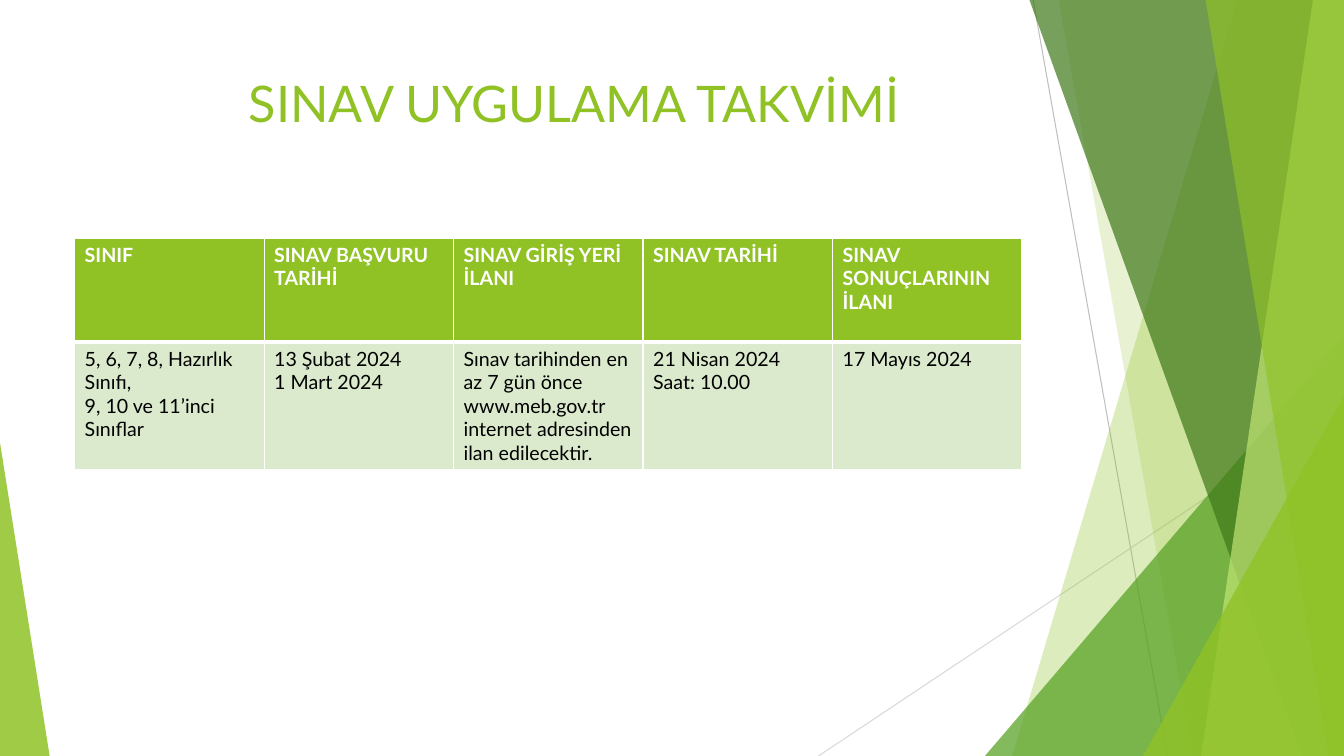
import dataclasses
import typing

import lxml.etree
import pptx
import pptx.dml.color
import pptx.enum.shapes
import pptx.enum.text
import pptx.oxml.ns
import pptx.util

Pt = pptx.util.Pt
qn = pptx.oxml.ns.qn


@dataclasses.dataclass(frozen=True)
class Theme:
    font: str = "Lato"
    title_size: float = 36
    table_size: float = 14
    lime: str = "90C226"
    pale_lime: str = "C0E474"
    green: str = "54A021"
    dark_green: str = "3F7819"
    body_fill: str = "DBE9CD"
    white: str = "FFFFFF"
    black: str = "000000"
    grey: str = "BFBFBF"
    light_grey: str = "D9D9D9"


@dataclasses.dataclass(frozen=True)
class Ray:
    start: tuple[float, float]
    end: tuple[float, float]
    color: str


@dataclasses.dataclass(frozen=True)
class Panel:
    """A band reaching the right edge, with a slanted left side."""
    top_x: float
    bottom_x: float
    color: str
    opacity: int


@dataclasses.dataclass(frozen=True)
class Wedge:
    """A right triangle standing on the bottom edge."""
    left: float
    top: float
    width: float
    apex: float
    color: str
    opacity: int


THEME = Theme()
WIDTH, HEIGHT = 960, 540
PANEL_TOP = -0.6
CONTENT_LEFT, CONTENT_WIDTH = 53.3, 676.8
ROW_HEIGHTS = (74.2, 91.2)

RAYS = (
    Ray((738, 0), (834, HEIGHT), THEME.grey),
    Ray((WIDTH, 290), (584.6, HEIGHT), THEME.light_grey),
)
DECORATIONS = (
    Panel(884, 723, THEME.lime, 30),
    Panel(756, 852, THEME.lime, 20),
    Wedge(703.5, 240, 256.5, 1, THEME.green, 72),
    Panel(735, 929.5, THEME.dark_green, 70),
    Panel(938, 858, THEME.pale_lime, 70),
    Panel(861, 949, THEME.lime, 65),
    Wedge(816.5, 283, 143.5, 1, THEME.lime, 80),
    Wedge(0, 316, 35.5, 0, THEME.lime, 85),
)
SCHEDULE = (
    ("SINIF", "SINAV BAŞVURU TARİHİ", "SINAV GİRİŞ YERİ İLANI",
     "SINAV TARİHİ", "SINAV SONUÇLARININ İLANI"),
    ("5, 6, 7, 8, Hazırlık Sınıfı,\n9, 10 ve 11’inci Sınıflar",
     "13 Şubat 2024\n1 Mart 2024",
     "Sınav tarihinden en az 7 gün önce www.meb.gov.tr internet adresinden ilan edilecektir.",
     "21 Nisan 2024 Saat: 10.00",
     "17 Mayıs 2024"),
)


def rgb(color: str) -> pptx.dml.color.RGBColor:
    return pptx.dml.color.RGBColor.from_string(color)


def write_text(frame: typing.Any, text: str, *, size: float, color: str, bold: bool = False) -> None:
    """Fill a text frame, one paragraph per line of text."""
    frame.text = text
    for para in frame.paragraphs:
        para.alignment = pptx.enum.text.PP_ALIGN.LEFT
        for span in para.runs:
            span.font.name = THEME.font
            span.font.size = Pt(size)
            span.font.bold = bold
            span.font.color.rgb = rgb(color)


def draw_ray(page: typing.Any, ray: Ray) -> None:
    line = page.shapes.add_connector(
        pptx.enum.shapes.MSO_CONNECTOR.STRAIGHT, *map(Pt, ray.start + ray.end))
    line.line.color.rgb = rgb(ray.color)
    line.line.width = Pt(0.75)
    lxml.etree.SubElement(line.element.spPr, qn("a:effectLst"))


def draw_decoration(page: typing.Any, item: Panel | Wedge) -> None:
    if isinstance(item, Panel):
        builder = page.shapes.build_freeform(item.top_x, PANEL_TOP, scale=Pt(1))
        builder.add_line_segments(
            [(WIDTH, PANEL_TOP), (WIDTH, HEIGHT), (item.bottom_x, HEIGHT)])
        shape = builder.convert_to_shape()
    else:
        shape = page.shapes.add_shape(
            pptx.enum.shapes.MSO_SHAPE.ISOSCELES_TRIANGLE,
            Pt(item.left), Pt(item.top), Pt(item.width), Pt(HEIGHT - item.top))
        shape.adjustments[0] = item.apex
    shape.shadow.inherit = False
    shape.line.fill.background()
    shape.fill.solid()
    shape.fill.fore_color.rgb = rgb(item.color)
    color_node = shape.element.spPr.find(qn("a:solidFill"))[0]
    lxml.etree.SubElement(color_node, qn("a:alpha"), val=str(item.opacity * 1000))


def set_border(cell: typing.Any, side: str, width: float) -> None:
    properties = cell._tc.get_or_add_tcPr()
    line = lxml.etree.SubElement(properties, qn(f"a:ln{side}"), w=str(Pt(width)))
    fill = lxml.etree.SubElement(line, qn("a:solidFill"))
    lxml.etree.SubElement(fill, qn("a:srgbClr"), val=THEME.white)


def draw_title(page: typing.Any, text: str) -> None:
    title = page.shapes.title
    title.left, title.top = Pt(CONTENT_LEFT), Pt(48)
    title.width, title.height = Pt(CONTENT_WIDTH), Pt(104)
    frame = title.text_frame
    frame.word_wrap = True
    frame.auto_size = pptx.enum.text.MSO_AUTO_SIZE.NONE
    frame.vertical_anchor = pptx.enum.text.MSO_ANCHOR.TOP
    frame.margin_left = Pt(124.5)
    write_text(frame, text, size=THEME.title_size, color=THEME.lime)
    # Bring the title in front of the decorations.
    title.element.getparent().append(title.element)


def draw_schedule(page: typing.Any) -> None:
    columns = len(SCHEDULE[0])
    table = page.shapes.add_table(
        len(SCHEDULE), columns, Pt(CONTENT_LEFT), Pt(170),
        Pt(CONTENT_WIDTH), Pt(sum(ROW_HEIGHTS))).table
    table.horz_banding = False
    for column in table.columns:
        column.width = Pt(CONTENT_WIDTH / columns)
    for row_index, texts in enumerate(SCHEDULE):
        table.rows[row_index].height = Pt(ROW_HEIGHTS[row_index])
        header = row_index == 0
        for column_index, text in enumerate(texts):
            cell = table.cell(row_index, column_index)
            write_text(cell.text_frame, text, size=THEME.table_size, bold=header,
                       color=THEME.white if header else THEME.black)
            thick_side = "B" if header else "T"
            for side in "LRTB":
                set_border(cell, side, 3 if side == thick_side else 1)
            cell.fill.solid()
            cell.fill.fore_color.rgb = rgb(THEME.lime if header else THEME.body_fill)


def main() -> None:
    deck = pptx.Presentation()
    deck.slide_width, deck.slide_height = Pt(WIDTH), Pt(HEIGHT)
    page = deck.slides.add_slide(deck.slide_layouts.get_by_name("Title Only"))
    for ray in RAYS:
        draw_ray(page, ray)
    for item in DECORATIONS:
        draw_decoration(page, item)
    draw_title(page, "SINAV UYGULAMA TAKVİMİ")
    draw_schedule(page)
    deck.save("out.pptx")


if __name__ == "__main__":
    main()
